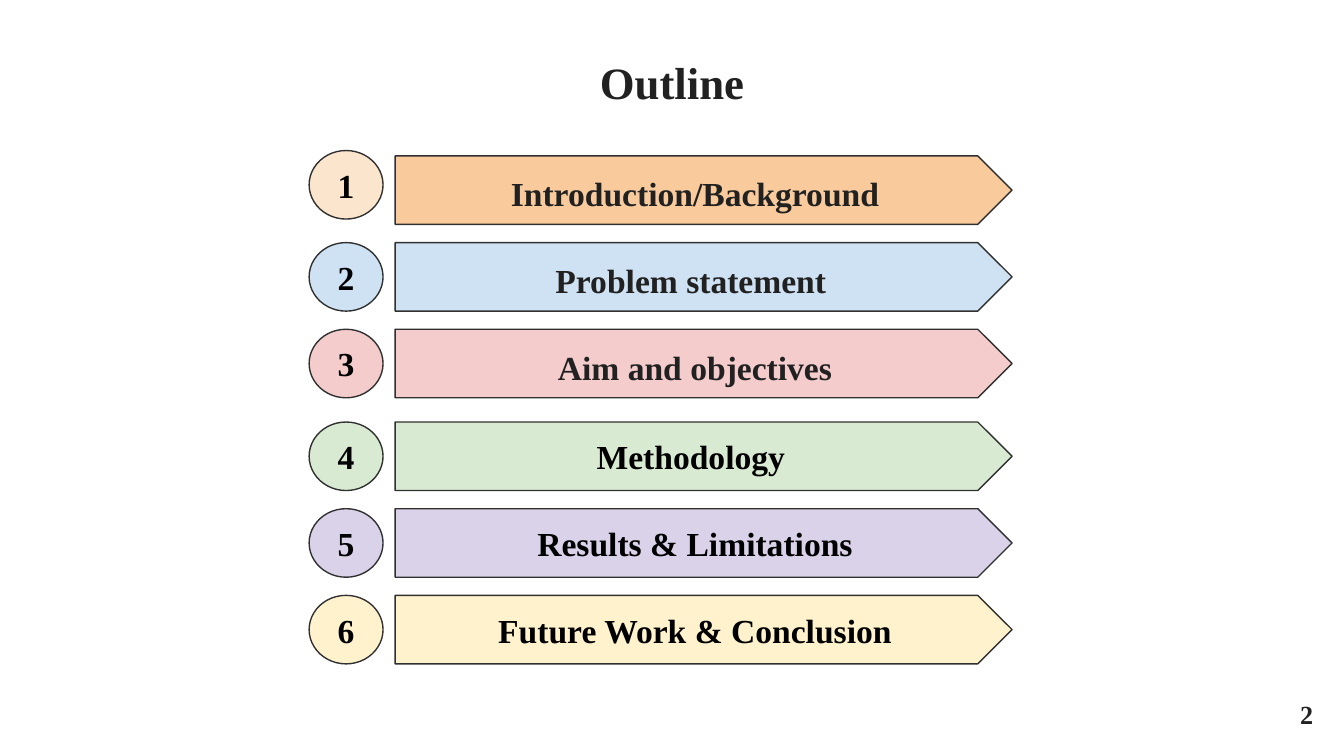
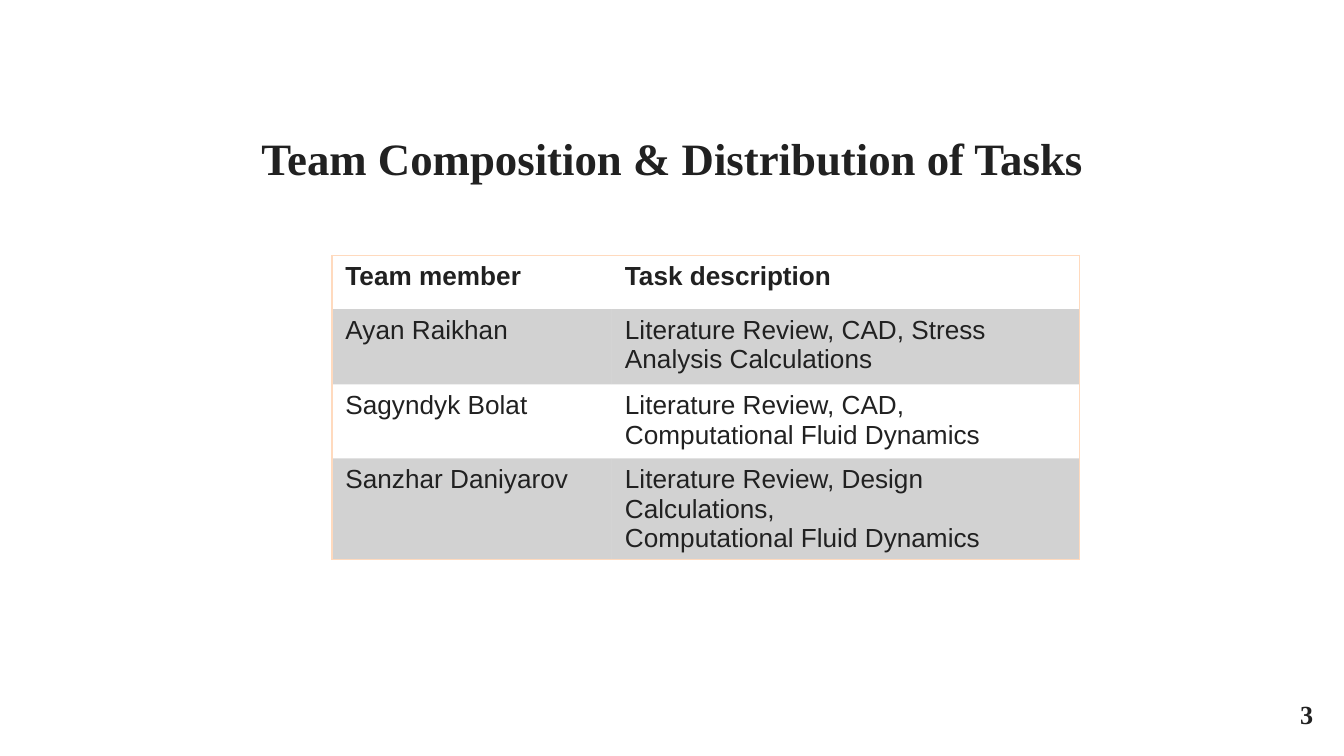
from lxml import etree
from pptx import Presentation
from pptx import util as u
from pptx.dml.color import RGBColor
from pptx.enum import shapes, text
from pptx.oxml import ns

# Content
OUTLINE_TITLE = "Outline"
TEAM_TITLE = "Team Composition & Distribution of Tasks"

INK = RGBColor(0x21, 0x21, 0x21)
BLACK = RGBColor(0, 0, 0)
WHITE = RGBColor(0xFF, 0xFF, 0xFF)
OUTLINE_EDGE = RGBColor(0x30, 0x30, 0x30)
TABLE_EDGE = RGBColor(0xFF, 0xDA, 0xBE)
ORANGE = RGBColor(0xF9, 0xCB, 0x9C)
PEACH = RGBColor(0xFC, 0xE5, 0xCD)
BLUE = RGBColor(0xCF, 0xE2, 0xF3)
PINK = RGBColor(0xF4, 0xCC, 0xCC)
GREEN = RGBColor(0xD9, 0xEA, 0xD3)
VIOLET = RGBColor(0xD9, 0xD2, 0xE9)
YELLOW = RGBColor(0xFF, 0xF2, 0xCC)

# Each group: text colour, line spacing, then (label, arrow fill, circle fill)
OUTLINE_GROUPS = [
    (INK, 1.15, [("Introduction/Background", ORANGE, PEACH),
                 ("Problem statement ", BLUE, BLUE),
                 ("Aim and objectives", PINK, PINK)]),
    (BLACK, 1.0, [("Methodology ", GREEN, GREEN),
                  ("Results & Limitations", VIOLET, VIOLET),
                  ("Future Work & Conclusion", YELLOW, YELLOW)]),
]

TEAM_ROWS = [
    ("Team member", "Task description"),
    ("Ayan Raikhan", "Literature Review, CAD, Stress Analysis Calculations"),
    ("Sagyndyk Bolat", "Literature Review, CAD,\nComputational Fluid Dynamics"),
    ("Sanzhar Daniyarov",
     "Literature Review, Design Calculations,\nComputational Fluid Dynamics"),
]

# Shared layout, in inches
SLIDE_WIDTH = 10
SLIDE_HEIGHT = SLIDE_WIDTH * 9 / 16
SERIF, SANS = "Times New Roman", "Arial"
TITLE_HEIGHT = 0.63
PLAIN_TABLE_STYLE = "{2D5ABB26-0587-4C30-8999-92F81FD0307C}"


def place(shape, left, top, width, height):
    shape.left, shape.top = u.Inches(left), u.Inches(top)
    shape.width, shape.height = u.Inches(width), u.Inches(height)


def write(frame, words, size, color=INK, bold=True, font=SERIF,
          align=text.PP_ALIGN.CENTER, spacing=None):
    frame.text = words
    for para in frame.paragraphs:
        para.alignment = align
        para.line_spacing = spacing
        para.font.name, para.font.size = font, u.Pt(size)
        para.font.bold, para.font.color.rgb = bold, color


def set_frame(frame):
    frame.word_wrap = True
    frame.auto_size = text.MSO_AUTO_SIZE.NONE
    frame.vertical_anchor = text.MSO_ANCHOR.MIDDLE
    frame.margin_left = frame.margin_right = u.Inches(0.1)
    frame.margin_top = frame.margin_bottom = u.Inches(0.1)


def add_page(deck, title, number, top, width):
    page = deck.slides.add_slide(deck.slide_layouts[5])
    place(page.shapes.title, (SLIDE_WIDTH - width) / 2, top, width, TITLE_HEIGHT)
    set_frame(page.shapes.title.text_frame)
    write(page.shapes.title.text_frame, title, 24)

    box = page.shapes.add_textbox(0, 0, 0, 0)
    place(box, 9.27, 5.1, 0.6, 0.43)
    set_frame(box.text_frame)
    write(box.text_frame, str(number), 14, align=text.PP_ALIGN.RIGHT)
    return page


def add_outline_shape(page, kind, bounds, fill, words, color, spacing=None):
    shape = page.shapes.add_shape(kind, 0, 0, 0, 0)
    place(shape, *bounds)
    shape.shadow.inherit = False
    shape.fill.solid()
    shape.fill.fore_color.rgb = fill
    shape.line.color.rgb = OUTLINE_EDGE
    shape.line.width = u.Pt(0.75)
    set_frame(shape.text_frame)
    write(shape.text_frame, words, 18, color, spacing=spacing)


def add_outline(page):
    first_top, group_step, row_step, height = 1.16, 1.98, 1.29 / 2, 0.51
    number = 0
    for group, (color, spacing, rows) in enumerate(OUTLINE_GROUPS):
        for row, (label, arrow_fill, circle_fill) in enumerate(rows):
            number += 1
            top = first_top + group * group_step + row * row_step
            circle_top = top - 0.04 if number == 1 else top
            add_outline_shape(page, shapes.MSO_SHAPE.PENTAGON,
                              (2.94, top, 4.59, height),
                              arrow_fill, label, color, spacing)
            add_outline_shape(page, shapes.MSO_SHAPE.OVAL,
                              (2.3, circle_top, 0.55, height),
                              circle_fill, str(number), BLACK)


def set_borders(cell, sides):
    """Draw the named sides; borders come before the fill in the cell."""
    properties = cell._tc.get_or_add_tcPr()
    for index, side in enumerate(sides):
        line = etree.Element(ns.qn(f"a:{side}"), w=str(u.Pt(0.75)))
        fill = etree.SubElement(line, ns.qn("a:solidFill"))
        etree.SubElement(fill, ns.qn("a:srgbClr"), val=str(TABLE_EDGE))
        properties.insert(index, line)


def shade(cell):
    cell.fill.solid()
    cell.fill.fore_color.rgb = INK
    color = cell._tc.tcPr.find(".//" + ns.qn("a:srgbClr"))
    etree.SubElement(color, ns.qn("a:alpha"), val="20000")


def add_team_table(page):
    widths, heights = (2.08, 3.48), (0.4, 0.56, 0.55, 0.56)
    frame = page.shapes.add_table(
        len(heights), len(widths), u.Inches(2.47), u.Inches(1.9),
        u.Inches(sum(widths)), u.Inches(sum(heights)))
    table = frame.table
    table.first_row = table.horz_banding = False
    table._tbl.tblPr.find(ns.qn("a:tableStyleId")).text = PLAIN_TABLE_STYLE
    for column, width in zip(table.columns, widths):
        column.width = u.Inches(width)

    last = len(TEAM_ROWS) - 1
    for r, (row, height) in enumerate(zip(TEAM_ROWS, heights)):
        table.rows[r].height = u.Inches(height)
        for c, words in enumerate(row):
            cell = table.cell(r, c)
            write(cell.text_frame, words, 14, bold=r == 0, font=SANS,
                  align=text.PP_ALIGN.LEFT)
            if r % 2:
                shade(cell)
            else:
                cell.fill.background()
            sides = ["lnR" if c else "lnL"]
            if r == 0:
                sides.append("lnT")
            if r == last:
                sides.append("lnB")
            set_borders(cell, sides)


def main():
    deck = Presentation()
    deck.slide_width = u.Inches(SLIDE_WIDTH)
    deck.slide_height = u.Inches(SLIDE_HEIGHT)
    background = deck.slide_master.background.fill
    background.solid()
    background.fore_color.rgb = WHITE

    add_outline(add_page(deck, OUTLINE_TITLE, 2, 0.29, SLIDE_WIDTH))
    add_team_table(add_page(deck, TEAM_TITLE, 3, 0.86, 6.72))
    deck.save("out.pptx")


if __name__ == "__main__":
    main()
